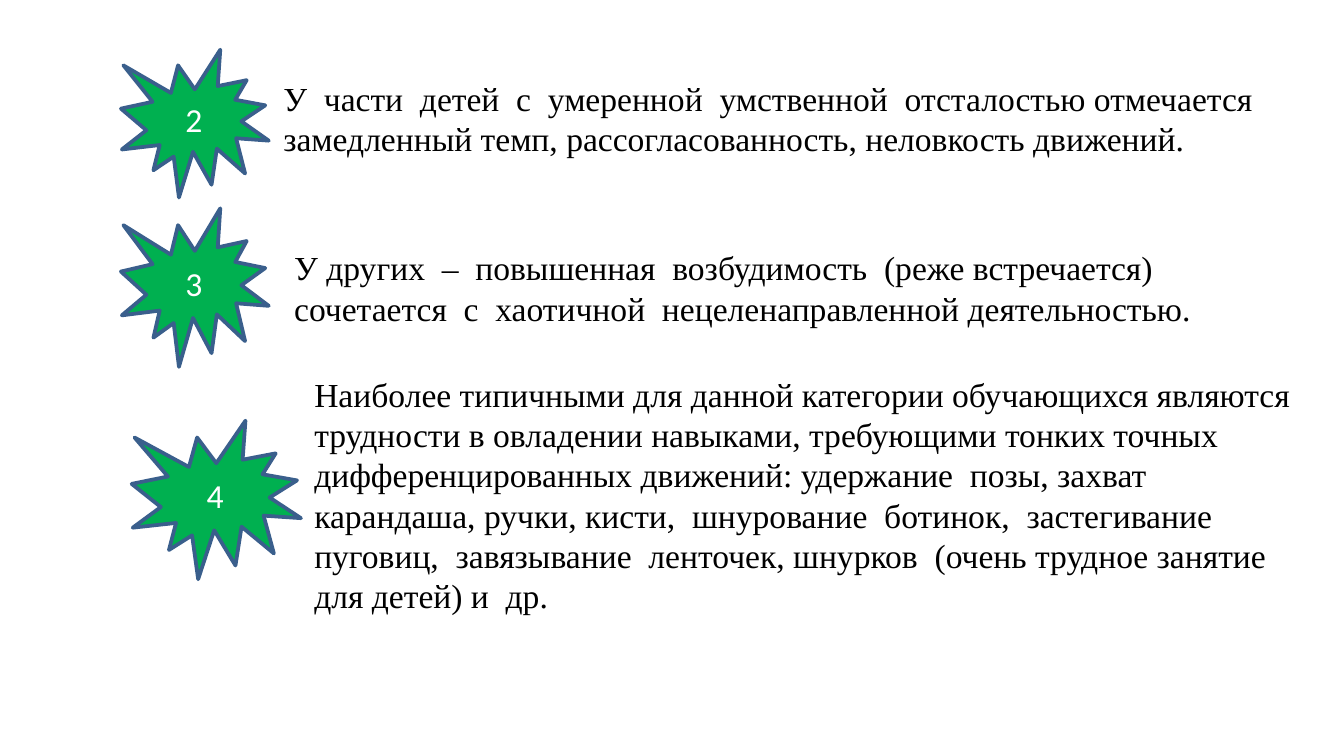
"""Builds a slide with three numbered observations on children's motor skills."""
from pptx import Presentation
from pptx.dml.color import RGBColor
from pptx.enum.shapes import MSO_SHAPE
from pptx.enum.text import MSO_ANCHOR, PP_ALIGN
from pptx.util import Inches, Pt

COLORS = {"star": "00B050", "outline": "3A5F8C", "number": "FFFFFF", "text": "000000"}


def write(frame, text, font, color, align=PP_ALIGN.LEFT, anchor=MSO_ANCHOR.TOP):
    frame.word_wrap = True
    frame.vertical_anchor = anchor
    paragraph = frame.paragraphs[0]
    paragraph.alignment = align
    run = paragraph.add_run()
    run.text = text
    run.font.name = font
    run.font.size = Pt(18)
    run.font.color.rgb = RGBColor.from_string(COLORS[color])


observations = [
    ("2", (0.9, 0.37, 1.1, 1.1), (2.01, 0.53, 7.48, 0.71),
     "У  части  детей  с  умеренной  умственной  отсталостью отмечается "
     "замедленный темп, рассогласованность, неловкость движений."),
    ("3", (0.9, 1.55, 1.1, 1.18), (2.09, 1.79, 7.72, 0.71),
     "У других  –  повышенная  возбудимость  (реже встречается) "
     "сочетается  с  хаотичной  нецеленаправленной деятельностью."),
    ("4", (0.98, 3.13, 1.26, 1.18), (2.24, 2.73, 7.5, 1.92),
     "Наиболее типичными для данной категории обучающихся являются "
     "трудности в овладении навыками, требующими тонких точных "
     "дифференцированных движений: удержание  позы, захват  "
     "карандаша, ручки, кисти,  шнурование  ботинок,  застегивание  "
     "пуговиц,  завязывание  ленточек, шнурков  (очень трудное занятие "
     "для детей) и  др."),
]

presentation = Presentation()
presentation.slide_width = Inches(10)
presentation.slide_height = Inches(10 * 9 / 16)
slide = presentation.slides.add_slide(presentation.slide_layouts[6])

for number, star_place, text_place, observation in observations:
    star = slide.shapes.add_shape(MSO_SHAPE.EXPLOSION1, *map(Inches, star_place))
    star.shadow.inherit = False
    star.fill.solid()
    star.fill.fore_color.rgb = RGBColor.from_string(COLORS["star"])
    star.line.color.rgb = RGBColor.from_string(COLORS["outline"])
    star.line.width = Pt(2)
    write(star.text_frame, number, font="Calibri", color="number",
          align=PP_ALIGN.CENTER, anchor=MSO_ANCHOR.MIDDLE)

    description = slide.shapes.add_textbox(*map(Inches, text_place))
    write(description.text_frame, observation, font="Times New Roman", color="text")

presentation.save("out.pptx")
